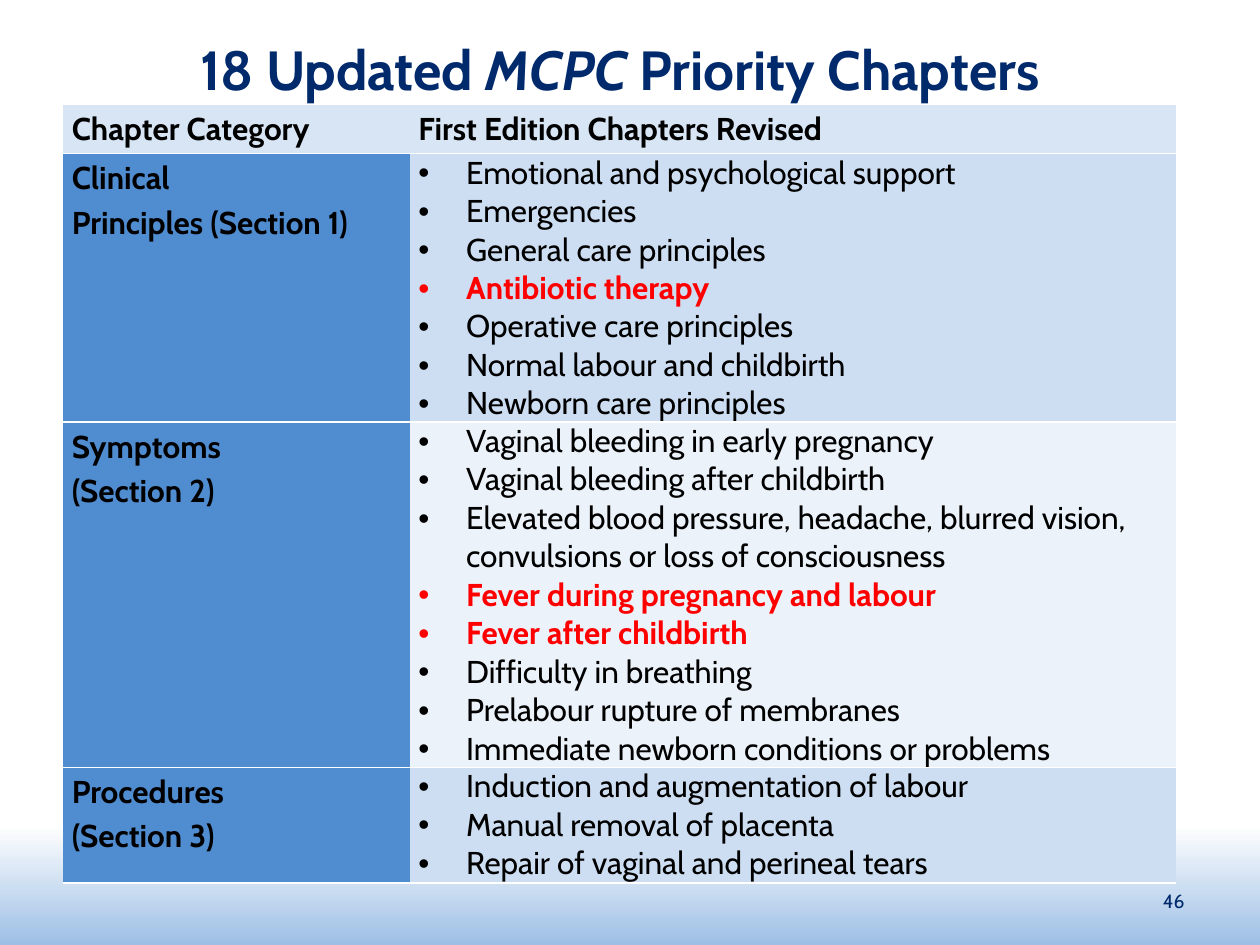
from dataclasses import dataclass
from lxml.etree import SubElement
from pptx import Presentation
from pptx.dml.color import RGBColor as RGB
from pptx.enum.shapes import MSO_SHAPE as Shape
from pptx.enum.text import MSO_ANCHOR as Anchor, PP_ALIGN as Align
from pptx.oxml import parse_xml
from pptx.oxml.ns import nsdecls, qn
from pptx.util import Emu, Inches, Pt


@dataclass(frozen=True)
class Theme:
    font: str = "Cabin"
    navy: str = "002A6C"
    black: str = "000000"
    red: str = "FF0000"
    white: str = "FFFFFF"
    glow: str = "9DBFE5"
    header: str = "D7E5F4"
    category: str = "508CD0"
    bands: tuple = ("CEDEF2", "EBF2F9")
    title_size: float = 31.5
    body_size: int = 18
    number_size: int = 11


theme = Theme()

# Sections: category lines, then chapters
sections = [
    (["Clinical", "Principles (Section 1)"],
     ["Emotional and psychological support", "Emergencies",
      "General care principles", "Antibiotic therapy",
      "Operative care principles", "Normal labour and childbirth",
      "Newborn care principles"]),
    (["Symptoms", "(Section 2)"],
     ["Vaginal bleeding in early pregnancy",
      "Vaginal bleeding after childbirth",
      "Elevated blood pressure, headache, blurred vision, "
      "convulsions or loss of consciousness",
      "Fever during pregnancy and labour", "Fever after childbirth",
      "Difficulty in breathing", "Prelabour rupture of membranes",
      "Immediate newborn conditions or problems"]),
    (["Procedures", "(Section 3)"],
     ["Induction and augmentation of labour", "Manual removal of placenta",
      "Repair of vaginal and perineal tears"]),
]
highlighted = {"Antibiotic therapy", "Fever during pregnancy and labour",
               "Fever after childbirth"}


def style(paragraph, size, color, bold=False):
    font = paragraph.font
    font.name, font.size, font.bold = theme.font, Pt(size), bold
    font.color.rgb = RGB.from_string(color)


def fill_cell(cell, lines, color, bulleted=False):
    cell.fill.solid()
    cell.fill.fore_color.rgb = RGB.from_string(color)
    cell.margin_left = cell.margin_right = Inches(0.07)
    cell.margin_top = cell.margin_bottom = 0
    # White rules above and below, none at the sides
    props = cell._tc.get_or_add_tcPr()
    white = f'<a:solidFill><a:srgbClr val="{theme.white}"/></a:solidFill>'
    for place, side in enumerate("LRTB"):
        paint = white if side in "TB" else "<a:noFill/>"
        props.insert(place, parse_xml(
            f'<a:ln{side} {nsdecls("a")} w="{Pt(1)}">{paint}</a:ln{side}>'))
    frame = cell.text_frame
    for i, line in enumerate(lines):
        paragraph = frame.add_paragraph() if i else frame.paragraphs[0]
        paragraph.text = line
        if not bulleted:
            paragraph.line_spacing = 1.15
            style(paragraph, theme.body_size, theme.black, True)
            continue
        marked = line in highlighted
        style(paragraph, theme.body_size,
              theme.red if marked else theme.black, marked)
        layout = paragraph._p.get_or_add_pPr()
        layout.set("marL", str(Inches(0.38)))
        layout.set("indent", str(-Inches(0.38)))
        bullet_font = parse_xml(f'<a:buFont {nsdecls("a")} typeface="Arial"/>')
        bullet = parse_xml(f'<a:buChar {nsdecls("a")} char="•"/>')
        layout.insert(0, bullet_font)
        layout.insert(1, bullet)


deck = Presentation()
deck.slide_width, deck.slide_height = Inches(10), Inches(7.5)
slide = deck.slides.add_slide(deck.slide_layouts[6])
shapes = slide.shapes

# Blue glow along the foot of the slide
glow_top = Inches(2.75)
glow = shapes.add_shape(Shape.RECTANGLE, 0, glow_top, deck.slide_width,
                        deck.slide_height - glow_top)
glow.shadow.inherit = False
glow.line.fill.background()
glow.fill.gradient()
glow.fill.gradient_angle = 270
for stop, position, color in zip(glow.fill.gradient_stops, (0.8, 1),
                                 (theme.white, theme.glow)):
    stop.position = position
    stop.color.rgb = RGB.from_string(color)

# Title
title = shapes.add_textbox(Inches(0.42), Inches(0.25), Inches(9),
                           Inches(0.58)).text_frame
title.word_wrap = True
title.vertical_anchor = Anchor.MIDDLE
heading = title.paragraphs[0]
heading.alignment = Align.CENTER
style(heading, theme.title_size, theme.navy, True)
for words in ("18 Updated ", "MCPC", " Priority Chapters"):
    run = heading.add_run()
    run.text = words
    run.font.italic = words == "MCPC"

# Chapter table
columns, rows = (2.75, 6.08), (0.39, 2.13, 2.74, 0.92)
chapters = shapes.add_table(len(rows), len(columns), Inches(0.5), Inches(0.83),
                            Inches(sum(columns)), Inches(sum(rows))).table
chapters.first_row = chapters.horz_banding = False
for column, width in zip(chapters.columns, columns):
    column.width = Inches(width)
for row, height in zip(chapters.rows, rows):
    row.height = Inches(height)

for c, label in enumerate(("Chapter Category", "First Edition Chapters Revised")):
    fill_cell(chapters.cell(0, c), [label], theme.header)
for r, (category, revised) in enumerate(sections, 1):
    fill_cell(chapters.cell(r, 0), category, theme.category)
    fill_cell(chapters.cell(r, 1), revised, theme.bands[(r - 1) % 2], True)

# Slide number
number = shapes.add_textbox(Inches(7.17), Inches(6.95), Inches(2.33),
                            Inches(0.4)).text_frame
number.word_wrap = True
number.vertical_anchor = Anchor.MIDDLE
number.text = "46"
number.paragraphs[0].alignment = Align.RIGHT
style(number.paragraphs[0], theme.number_size, theme.navy)

deck.save("out.pptx")
